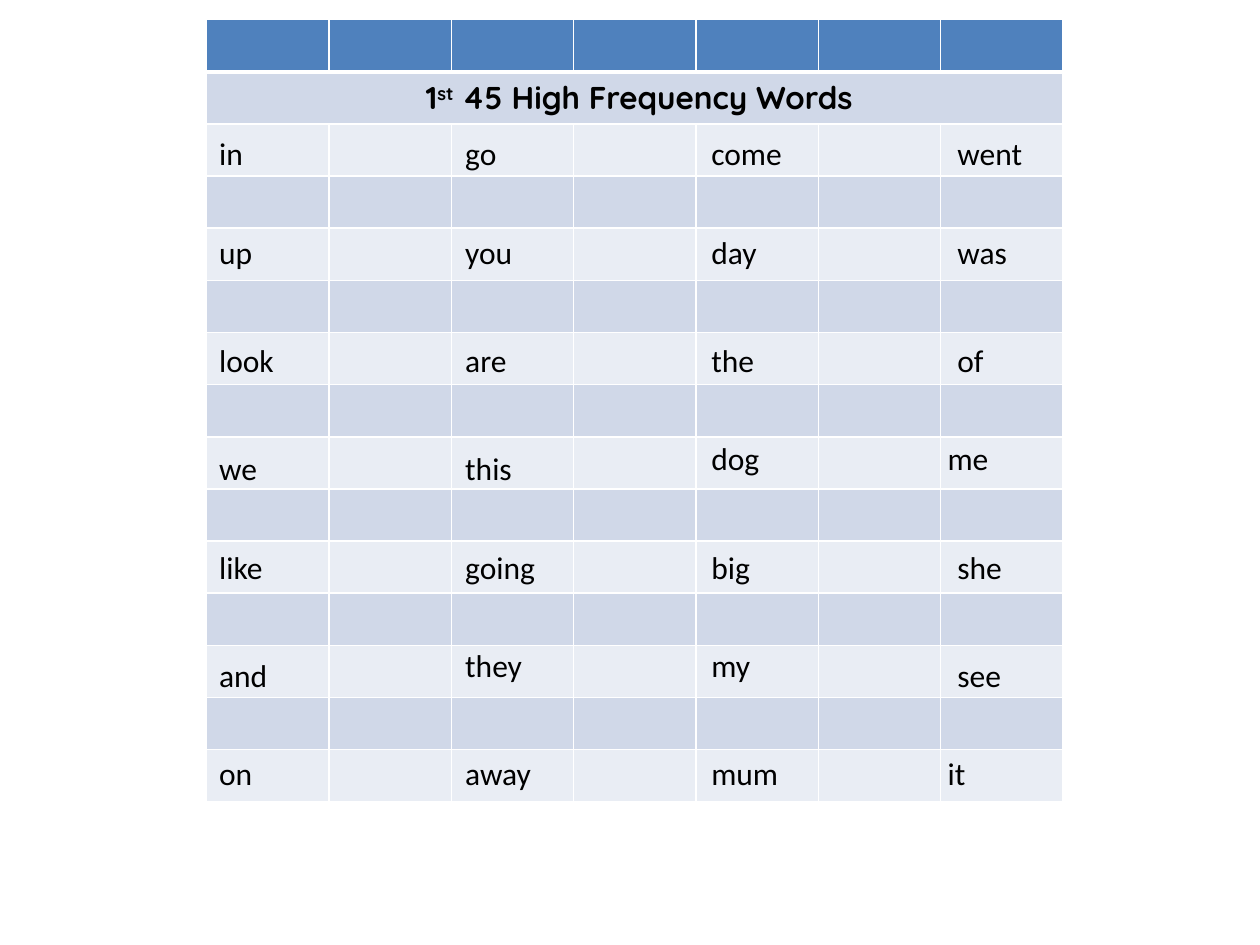
"""Build the chart of the first 45 high frequency words."""
from lxml import etree
from pptx import Presentation
from pptx.dml.color import RGBColor
from pptx.enum.text import MSO_AUTO_SIZE, PP_ALIGN
from pptx.oxml.ns import qn
from pptx.util import Inches, Pt

GROW = MSO_AUTO_SIZE.SHAPE_TO_FIT_TEXT
CENTER = PP_ALIGN.CENTER

BLACK = RGBColor(0x00, 0x00, 0x00)
WHITE = RGBColor(0xFF, 0xFF, 0xFF)
HEADER_BLUE = RGBColor(0x4F, 0x81, 0xBD)
DARK_BAND = RGBColor(0xD0, 0xD8, 0xE8)
LIGHT_BAND = RGBColor(0xE9, 0xED, 0xF4)

GRID_COLUMNS = 128
TABLE_LEFT, TABLE_TOP, TABLE_WIDTH, TABLE_HEIGHT = 21, 2, 87, 79.5
TABLE_ROWS, TABLE_COLUMNS = 15, 7
WORD_STEP, WORD_WIDTH, WORD_HEIGHT = 25, 12, 5.2

TITLE = [(" 1", 0), ("st", 30000), (" 45 High Frequency Words", 0)]
WORD_ROWS = [
    (13, ["in", "go", "come", "went"]),
    (23, ["up", "you", "day", "was"]),
    (34, ["look", "are", "the", "of"]),
    (45, ["we", "this", "dog", "me"]),
    (55, ["like", "going", "big", "she"]),
    (66, ["and", "they", "my", "see"]),
    (76, ["on", "away", "mum", "it"]),
]
RAISED_WORDS = {"dog", "me", "they", "my"}
LEFT_SHIFTED_WORDS = {"me", "it"}


class WordChart:
    """Hold the text styles and the page, and draw each kind of element."""

    title_style = {"name": "Quicksand", "size": Pt(18), "bold": True}
    word_style = {"name": "Calibri", "size": Pt(18)}

    def __init__(self, deck):
        self.unit = deck.slide_width / GRID_COLUMNS
        self.page = deck.slides.add_slide(deck.slide_layouts[6])

    def place(self, *lengths):
        return [round(length * self.unit) for length in lengths]

    def add_span(self, para, text, style, baseline=0):
        span = para.add_run()
        span.text = text
        for name, value in style.items():
            setattr(span.font, name, value)
        span.font.color.rgb = BLACK
        if baseline:
            span._r.get_or_add_rPr().set("baseline", str(baseline))

    def border(self, cell, widths):
        properties = cell._tc.get_or_add_tcPr()
        for index, (side, width) in enumerate(widths.items()):
            line = etree.Element(qn(f"a:ln{side}"), w=str(Pt(width)))
            fill = etree.SubElement(line, qn("a:solidFill"))
            etree.SubElement(fill, qn("a:srgbClr"), val=str(WHITE))
            properties.insert(index, line)

    def table(self):
        frame = self.page.shapes.add_table(
            TABLE_ROWS, TABLE_COLUMNS,
            *self.place(TABLE_LEFT, TABLE_TOP, TABLE_WIDTH, TABLE_HEIGHT))
        table = frame.table
        for row_index, row in enumerate(table.rows):
            band = DARK_BAND if row_index % 2 else LIGHT_BAND
            widths = {"L": 1, "R": 1,
                      "T": 3 if row_index == 1 else 1,
                      "B": 3 if row_index == 0 else 1}
            for cell in row.cells:
                cell.fill.solid()
                cell.fill.fore_color.rgb = band if row_index else HEADER_BLUE
                self.border(cell, widths)
        title_cell = table.cell(1, 0)
        title_cell.merge(table.cell(1, TABLE_COLUMNS - 1))
        para = title_cell.text_frame.paragraphs[0]
        para.alignment = CENTER
        for text, baseline in TITLE:
            self.add_span(para, text, self.title_style, baseline)

    def word(self, text, left, top):
        box = self.page.shapes.add_textbox(
            *self.place(left, top, WORD_WIDTH, WORD_HEIGHT))
        box.text_frame.word_wrap = True
        box.text_frame.auto_size = GROW
        self.add_span(box.text_frame.paragraphs[0], text, self.word_style)


def main():
    deck = Presentation()
    deck.slide_width, deck.slide_height = Inches(10), Inches(7.5)
    chart = WordChart(deck)
    chart.table()
    for top, words in WORD_ROWS:
        for column, text in enumerate(words):
            left = TABLE_LEFT + column * WORD_STEP
            chart.word(text, left - (text in LEFT_SHIFTED_WORDS),
                       top - (text in RAISED_WORDS))
    deck.save("out.pptx")


if __name__ == "__main__":
    main()
